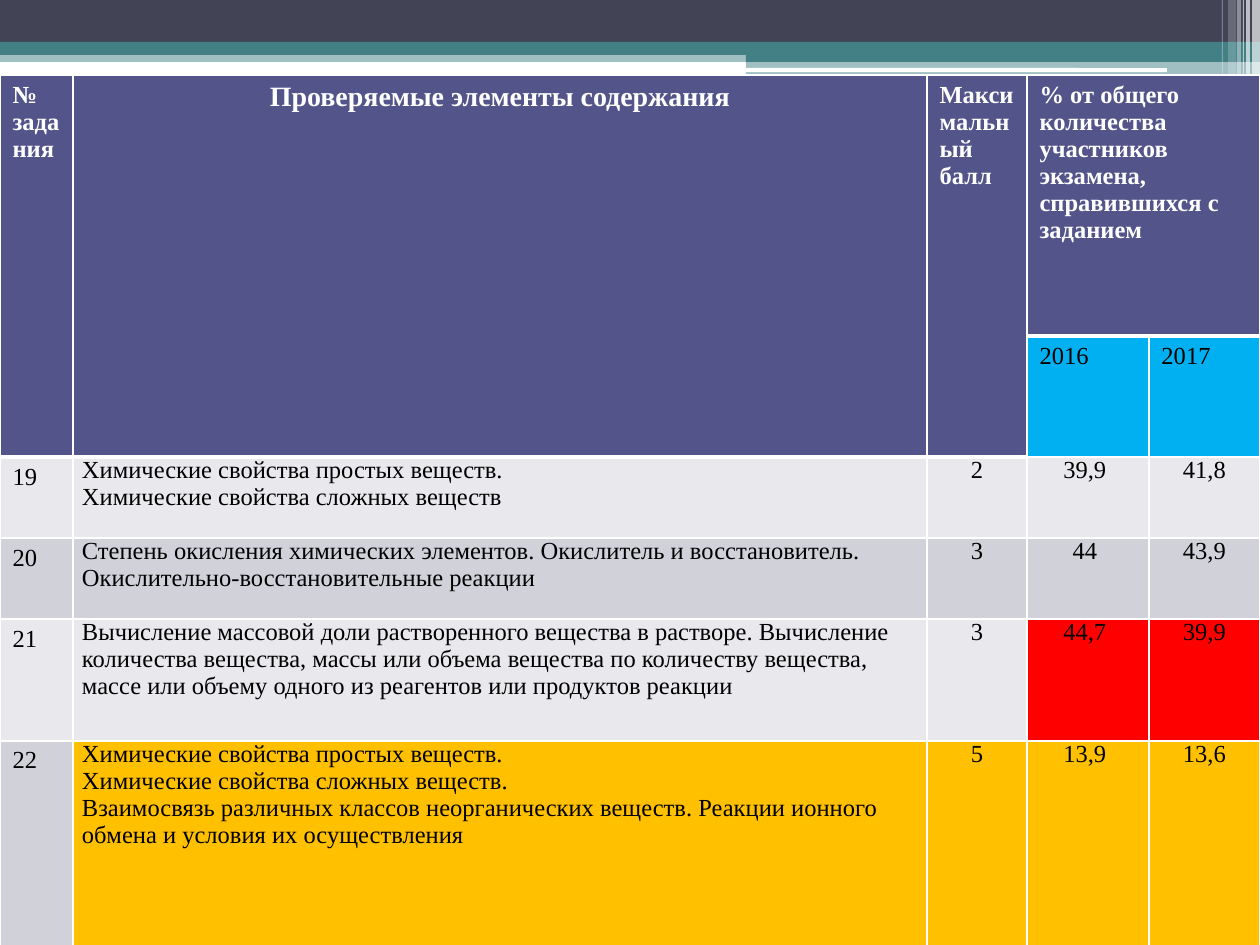
import pptx
import pptx.util
import pptx.dml.color
import pptx.enum.shapes
import pptx.enum.text
import pptx.oxml
import pptx.oxml.ns
from lxml import etree

RGB = pptx.dml.color.RGBColor
WHITE = RGB(0xFF, 0xFF, 0xFF)
BLACK = RGB(0x00, 0x00, 0x00)
SLATE = RGB(0x42, 0x44, 0x56)
TEAL = RGB(0x43, 0x80, 0x86)
INDIGO = RGB(0x53, 0x54, 0x8A)
SKY = RGB(0x00, 0xB0, 0xF0)
RED = RGB(0xFF, 0x00, 0x00)
AMBER = RGB(0xFF, 0xC0, 0x00)
LIGHT = RGB(0xE9, 0xE9, 0xED)
DARK = RGB(0xD1, 0xD1, 0xDA)

FONT = "Times New Roman"
PX_PER_INCH = 126
LEFT, CENTER = pptx.enum.text.PP_ALIGN.LEFT, pptx.enum.text.PP_ALIGN.CENTER
RECT = pptx.enum.shapes.MSO_SHAPE.RECTANGLE
ROUNDED = pptx.enum.shapes.MSO_SHAPE.ROUNDED_RECTANGLE

COLUMNS = [73, 854, 100, 122, 111]
ROWS = [261, 59, 81, 81, 122, 250]

# Left, top, width, height, colour, opacity in percent
BANDS = [
    (0, 50, 1260, 12, TEAL, 50),
    (0, 0, 1260, 42, SLATE, 100),
    (0, 42, 1260, 13, TEAL, 100),
    (746, 49, 514, 13, TEAL, 100),
    (746, 61, 514, 25, TEAL, 50),
]
PILLS = [(745, 68, 422, 4), (1016, 81, 220, 5)]
# Left, width, height, opacity in percent
STRIPES = [
    (1252, 8, 86, 65),
    (1246, 4, 86, 65),
    (1243, 1, 86, 60),
    (1237, 4, 86, 40),
    (1228, 8, 81, 20),
    (1222, 1, 81, 30),
]

HEADINGS = [
    ("№ задания", 14, LEFT),
    ("Проверяемые элементы содержания", 16, CENTER),
    ("Максимальный балл", 14, LEFT),
    ("% от общего количества участников экзамена, справившихся с заданием", 14, LEFT),
]
YEARS = ["2016", "2017"]
# Number, content, points, results; then fills of number, content and points, results
TASKS = [
    ("19", ["Химические свойства простых веществ.",
            "Химические свойства сложных веществ"],
     "2", ["39,9 ", "41,8"], LIGHT, LIGHT, LIGHT),
    ("20", ["Степень окисления химических элементов. Окислитель и восстановитель.",
            "Окислительно-восстановительные реакции"],
     "3", ["44 ", "43,9"], DARK, DARK, DARK),
    ("21", ["Вычисление массовой доли растворенного вещества в растворе. Вычисление "
            "количества вещества, массы или объема вещества по количеству вещества, "
            "массе или объему одного из реагентов или продуктов реакции"],
     "3", ["44,7 ", "39,9"], LIGHT, LIGHT, RED),
    ("22", ["Химические свойства простых веществ.",
            "Химические свойства сложных веществ.",
            "Взаимосвязь различных классов неорганических веществ. Реакции ионного "
            "обмена и условия их осуществления"],
     "5", ["13,9 ", "13,6"], DARK, AMBER, AMBER),
]


def px(length):
    return pptx.util.Emu(round(length * 914400 / PX_PER_INCH))


def add_band(slide, left, top, width, height, color, opacity=100, kind=RECT):
    band = slide.shapes.add_shape(kind, px(left), px(top), px(width), px(height))
    band.shadow.inherit = False
    band.line.fill.background()
    band.fill.solid()
    band.fill.fore_color.rgb = color
    if opacity < 100:
        rgb = band.fill._xPr.find(".//" + pptx.oxml.ns.qn("a:srgbClr"))
        etree.SubElement(rgb, pptx.oxml.ns.qn("a:alpha"), val=str(opacity * 1000))


def set_borders(cell, top=1, bottom=1):
    properties = cell._tc.get_or_add_tcPr()
    widths = {"lnL": 1, "lnR": 1, "lnT": top, "lnB": bottom}
    for position, (side, points) in enumerate(widths.items()):
        properties.insert(position, pptx.oxml.parse_xml(
            f'<a:{side} {pptx.oxml.ns.nsdecls("a")} w="{points * 12700}">'
            f'<a:solidFill><a:srgbClr val="{WHITE}"/></a:solidFill></a:{side}>'))


def fill_cell(cell, lines, fill, color=BLACK, size=14, bold=False, align=LEFT, tight=False):
    cell.fill.solid()
    cell.fill.fore_color.rgb = fill
    if tight:
        cell.margin_left = cell.margin_right = px(9)
        cell.margin_top = cell.margin_bottom = 0
    cell.text = "\n".join(lines)
    for paragraph in cell.text_frame.paragraphs:
        paragraph.alignment = align
        paragraph.font.name = FONT
        paragraph.font.size = pptx.util.Pt(size)
        paragraph.font.bold = bold
        paragraph.font.color.rgb = color


def add_results_table(slide):
    table = slide.shapes.add_table(len(ROWS), len(COLUMNS), 0, px(75),
                                   px(sum(COLUMNS)), px(sum(ROWS))).table
    table.first_row = table.horz_banding = False
    for column, width in zip(table.columns, COLUMNS):
        column.width = px(width)
    for row, height in zip(table.rows, ROWS):
        row.height = px(height)

    # Heavy rule below the headings, which end one row higher over the years
    for r in range(len(ROWS)):
        for c in range(len(COLUMNS)):
            heading_end = 1 if c < 3 else 0
            set_borders(table.cell(r, c),
                        top=3 if r == heading_end + 1 else 1,
                        bottom=3 if r <= heading_end else 1)

    # Headings
    for c in range(3):
        table.cell(0, c).merge(table.cell(1, c))
    table.cell(0, 3).merge(table.cell(0, 4))
    for c, (heading, size, align) in enumerate(HEADINGS):
        fill_cell(table.cell(0, c), [heading], INDIGO, WHITE, size, True, align)
    for c, year in enumerate(YEARS, 3):
        fill_cell(table.cell(1, c), [year], SKY)

    # Tasks
    for r, task in enumerate(TASKS, 2):
        number, content, points, results, number_fill, content_fill, result_fill = task
        fill_cell(table.cell(r, 0), [number], number_fill)
        fill_cell(table.cell(r, 1), content, content_fill, tight=True)
        fill_cell(table.cell(r, 2), [points], content_fill, align=CENTER, tight=True)
        for c, result in enumerate(results, 3):
            fill_cell(table.cell(r, c), [result], result_fill, align=CENTER, tight=True)


def main():
    deck = pptx.Presentation()
    deck.slide_width = pptx.util.Inches(10)
    deck.slide_height = pptx.util.Inches(7.5)
    slide = deck.slides.add_slide(deck.slide_layouts[6])

    # Header decoration
    for band in BANDS:
        add_band(slide, *band)
    for pill in PILLS:
        add_band(slide, *pill, WHITE, kind=ROUNDED)
    for left, width, height, opacity in STRIPES:
        add_band(slide, left, 0, width, height, WHITE, opacity)

    add_results_table(slide)
    deck.save("out.pptx")


if __name__ == "__main__":
    main()
